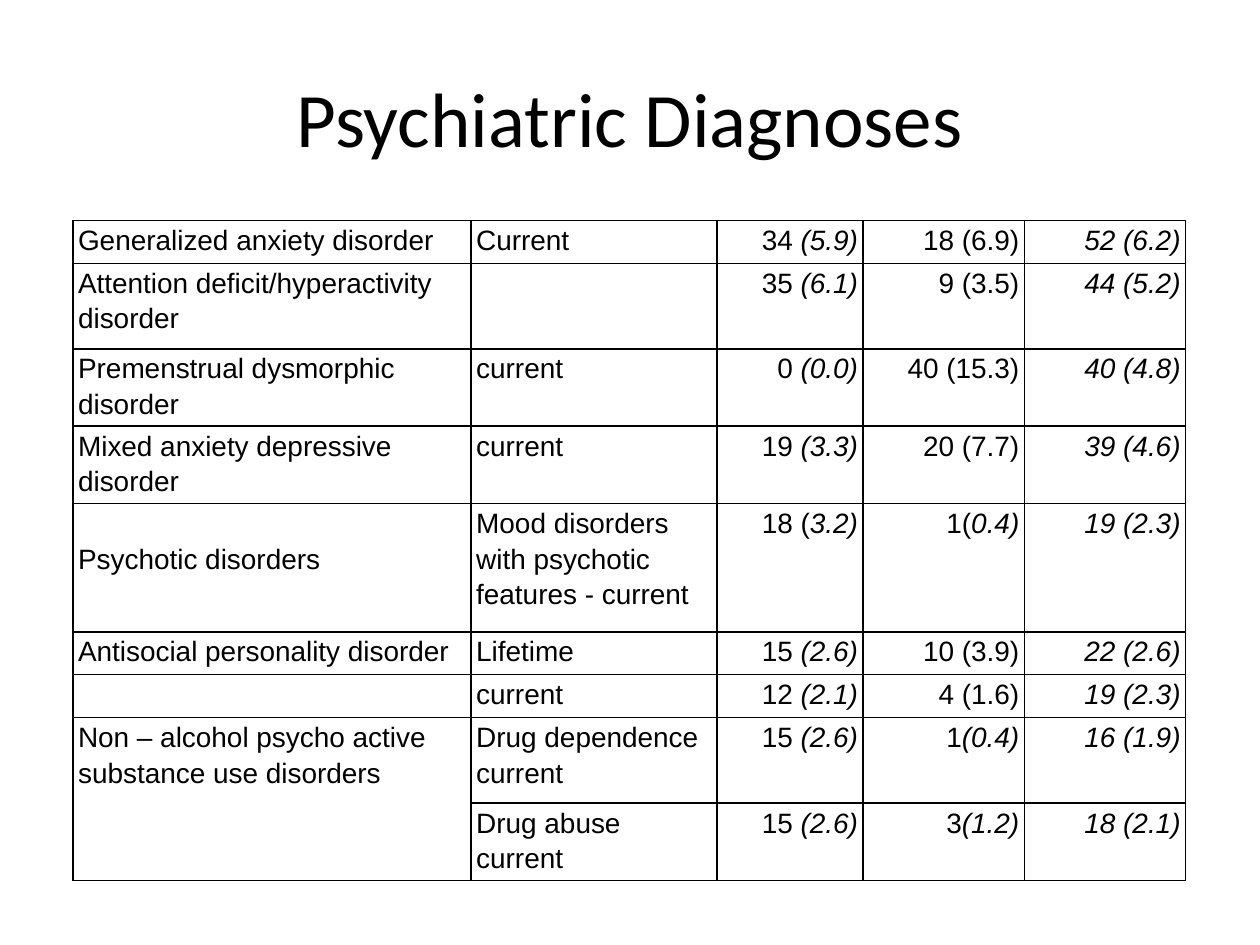
from lxml.etree import SubElement
from pptx import Presentation
from pptx.dml.color import RGBColor
from pptx.enum.text import MSO_ANCHOR, PP_ALIGN
from pptx.oxml.ns import qn
from pptx.util import Inches, Pt

WIDE, HIGH = Inches(10), Inches(7.5)
INK = "000000"
COLS = (0.316, 0.195, 0.116, 0.128, 0.128)  # shares of the slide width
LINE = 0.34 / 7.5  # one text line as a share of the slide height
LINES = (1, 2, 1.2, 1.2, 3, 1, 1, 2, 1)

# Text between asterisks is italic.
ROWS = (
    ("Generalized anxiety disorder", "Current", "34 *(5.9)*", "18 (6.9)", "*52 (6.2)*"),
    ("Attention deficit/hyperactivity disorder", "", "35 *(6.1)*", "9 (3.5)", "*44 (5.2)*"),
    ("Premenstrual dysmorphic disorder", "current", "0 *(0.0)*", "40 (15.3)", "*40 (4.8)*"),
    ("Mixed anxiety depressive disorder", "current", "19 *(3.3)*", "20 (7.7)", "*39 (4.6)*"),
    ("Psychotic disorders", "Mood disorders with psychotic features - current",
     "18 (*3.2)*", "1(*0.4)*", "*19 (2.3)*"),
    ("Antisocial personality disorder", "Lifetime", "15 *(2.6)*", "10 (3.9)", "*22 (2.6)*"),
    ("", "current", "12 *(2.1)*", "4 (1.6)", "*19 (2.3)*"),
    ("Non – alcohol psycho active substance use disorders", "Drug dependence current",
     "15 *(2.6)*", "1*(0.4)*", "*16 (1.9)*"),
    ("", "Drug abuse current", "15 *(2.6)*", "3*(1.2)*", "*18 (2.1)*"),
)
PSYCHOTIC, DRUGS = 4, 7  # rows with a lowered label and a merged label


def color(code):
    return RGBColor.from_string(code)


def style(item, form):
    """Set each attribute named in form on item."""
    for name, value in form.items():
        setattr(item, name, value)


def place(x, y, w, h):
    """Turn shares of the slide into lengths."""
    return int(x * WIDE), int(y * HIGH), int(w * WIDE), int(h * HIGH)


def write(para, text, face, size):
    for i, part in enumerate(text.split("*")):
        if part:
            run = para.add_run()
            run.text = part
            style(run.font, {"name": face, "size": Pt(size), "italic": i % 2 == 1})
            run.font.color.rgb = color(INK)


def add_title(slide, text):
    box = slide.shapes.add_textbox(*place(0.05, 0.04, 0.9, 1.25 / 7.5))
    style(box.text_frame, {"word_wrap": True, "vertical_anchor": MSO_ANCHOR.MIDDLE})
    para = box.text_frame.paragraphs[0]
    para.alignment = PP_ALIGN.CENTER
    write(para, text, "Calibri", 44)


def add_edges(cell):
    props = cell._tc.get_or_add_tcPr()
    for side in ("lnL", "lnR", "lnT", "lnB"):
        edge = SubElement(props, qn(f"a:{side}"), w=str(Pt(1)))
        fill = SubElement(edge, qn("a:solidFill"))
        SubElement(fill, qn("a:srgbClr"), val=INK)


def fill_cell(cell, text, align):
    style(cell, {"margin_left": Inches(0.04), "margin_right": Inches(0.04),
                 "margin_top": 0, "margin_bottom": 0})
    add_edges(cell)
    cell.fill.background()
    para = cell.text_frame.paragraphs[0]
    style(para, {"alignment": align, "line_spacing": 1.15})
    write(para, text, "Arial", 16)


def add_grid(slide):
    area = place(0.058, 1.75 / 7.5, sum(COLS), 0.7)
    frame = slide.shapes.add_table(len(ROWS), len(COLS), *area)
    table = frame.table
    style(table, {"first_row": False, "horz_banding": False})
    for col, share in zip(table.columns, COLS):
        col.width = int(share * WIDE)
    for row, lines in zip(table.rows, LINES):
        row.height = int(lines * LINE * HIGH)
    frame.height = area[3]
    for r, texts in enumerate(ROWS):
        for c, text in enumerate(texts):
            align = PP_ALIGN.LEFT if c < 2 else PP_ALIGN.RIGHT
            fill_cell(table.cell(r, c), text, align)
    table.cell(PSYCHOTIC, 0).margin_top = Inches(0.29)
    table.cell(DRUGS, 0).merge(table.cell(DRUGS + 1, 0))


def main():
    deck = Presentation()
    style(deck, {"slide_width": WIDE, "slide_height": HIGH})
    slide = deck.slides.add_slide(deck.slide_layouts[6])
    add_title(slide, "Psychiatric Diagnoses")
    add_grid(slide)
    deck.save("out.pptx")


if __name__ == "__main__":
    main()
